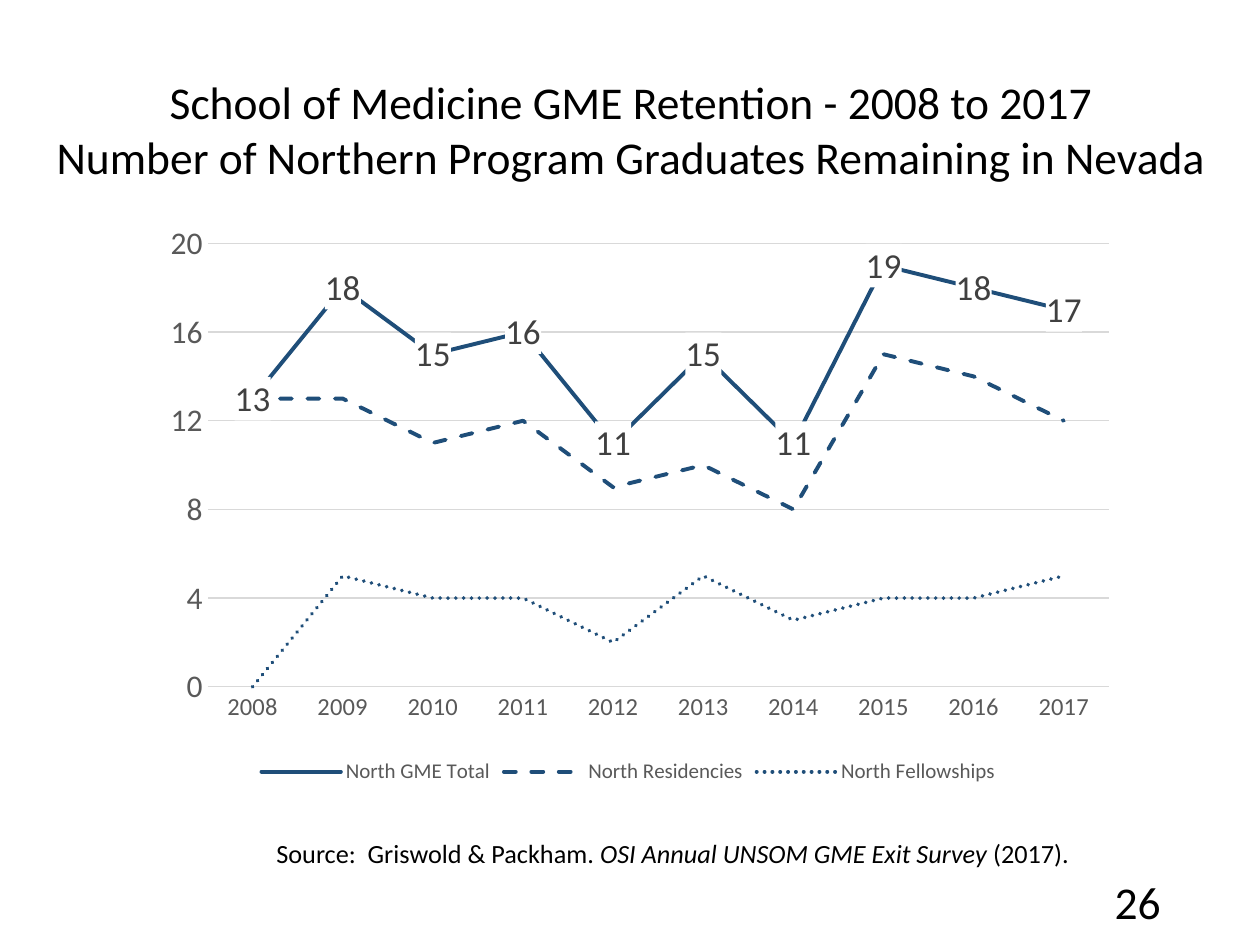
from dataclasses import dataclass

from lxml import etree
from pptx import Presentation
from pptx.chart.data import CategoryChartData
from pptx.dml.color import RGBColor
from pptx.enum.chart import XL_CHART_TYPE, XL_LABEL_POSITION, XL_LEGEND_POSITION, XL_TICK_MARK
from pptx.enum.dml import MSO_LINE
from pptx.enum.text import MSO_ANCHOR, MSO_AUTO_SIZE, PP_ALIGN
from pptx.oxml import parse_xml
from pptx.oxml.ns import nsdecls, qn
from pptx.util import Cm, Pt

LINE_CHART = XL_CHART_TYPE.LINE
LABEL_CENTER = XL_LABEL_POSITION.CENTER
LEGEND_BOTTOM = XL_LEGEND_POSITION.BOTTOM
NO_TICK = XL_TICK_MARK.NONE
SOLID, DASH, DOT = MSO_LINE.SOLID, MSO_LINE.DASH, MSO_LINE.ROUND_DOT
TOP, MIDDLE = MSO_ANCHOR.TOP, MSO_ANCHOR.MIDDLE
FIXED, GROW = MSO_AUTO_SIZE.NONE, MSO_AUTO_SIZE.SHAPE_TO_FIT_TEXT
CENTER, RIGHT = PP_ALIGN.CENTER, PP_ALIGN.RIGHT

FONT = "Calibri"
BLACK, NAVY, LABEL_GRAY, AXIS_GRAY, GRID_GRAY = "000000", "1F4E79", "404040", "595959", "D9D9D9"
YEARS = [str(year) for year in range(2008, 2018)]


@dataclass
class Run:
    text: str
    italic: bool = False


@dataclass
class TextBlock:
    left: float
    top: float
    width: float
    height: float
    size: int
    paragraphs: list[list[Run]]
    align: PP_ALIGN = CENTER
    anchor: MSO_ANCHOR = TOP
    auto_size: MSO_AUTO_SIZE = GROW


@dataclass
class Trend:
    name: str
    graduates: list[int]
    dash: MSO_LINE


TEXTS = [
    TextBlock(0.79, 1.37, 23.88, 2.49, 26, [
        [Run("School of Medicine GME Retention - 2008 to 2017")],
        [Run("Number of Northern Program Graduates Remaining in Nevada")],
    ]),
    TextBlock(4.78, 16.76, 17.68, 0.89, 15, [[
        Run("Source:  Griswold & Packham. "),
        Run("OSI Annual UNSOM GME Exit Survey ", italic=True),
        Run("(2017). "),
    ]]),
    TextBlock(17.93, 17.65, 5.72, 1.02, 26, [[Run("26")]], RIGHT, MIDDLE, FIXED),
]
TRENDS = [
    Trend("North GME Total", [13, 18, 15, 16, 11, 15, 11, 19, 18, 17], SOLID),
    Trend("North Residencies", [13, 13, 11, 12, 9, 10, 8, 15, 14, 12], DASH),
    Trend("North Fellowships", [0, 5, 4, 4, 2, 5, 3, 4, 4, 5], DOT),
]


def rgb(color: str) -> RGBColor:
    return RGBColor.from_string(color)


def style_font(font, size: int, color: str) -> None:
    font.name = FONT
    font.size = Pt(size)
    font.color.rgb = rgb(color)


def style_line(line, color: str, width: float) -> None:
    line.color.rgb = rgb(color)
    line.width = Pt(width)


def add_text(slide, block: TextBlock) -> None:
    box = slide.shapes.add_textbox(
        Cm(block.left), Cm(block.top), Cm(block.width), Cm(block.height))
    frame = box.text_frame
    frame.word_wrap = True
    frame.auto_size = block.auto_size
    frame.vertical_anchor = block.anchor
    for index, runs in enumerate(block.paragraphs):
        paragraph = frame.add_paragraph() if index else frame.paragraphs[0]
        paragraph.alignment = block.align
        for part in runs:
            run = paragraph.add_run()
            run.text = part.text
            style_font(run.font, block.size, BLACK)
            run.font.italic = part.italic


def set_plot_layout(chart, x: float, y: float, w: float, h: float) -> None:
    """Fix the inner plot area, in fractions of the chart's size."""
    plot_area = chart.element.find(".//" + qn("c:plotArea"))
    layout = plot_area.find(qn("c:layout"))
    if layout is None:
        layout = etree.Element(qn("c:layout"))
        plot_area.insert(0, layout)
    manual = etree.SubElement(layout, qn("c:manualLayout"))
    settings = {"layoutTarget": "inner", "xMode": "edge", "yMode": "edge",
                "x": x, "y": y, "w": w, "h": h}
    for tag, value in settings.items():
        etree.SubElement(manual, qn(f"c:{tag}")).set("val", str(value))


def label_values(series) -> None:
    """Show values on a white patch in the middle of each point."""
    labels = series.data_labels
    labels.show_value = True
    labels.position = LABEL_CENTER
    style_font(labels.font, 20, LABEL_GRAY)
    patch = parse_xml(
        f'<c:spPr {nsdecls("c", "a")}><a:solidFill><a:srgbClr val="FFFFFF"/></a:solidFill>'
        "<a:ln><a:noFill/></a:ln></c:spPr>")
    labels.font  # the text properties must follow the patch
    series.format.line  # the line properties belong to the series itself
    series_labels = series.data_labels._element
    series_labels.find(qn("c:txPr")).addprevious(patch)


def style_axes(chart) -> None:
    years, counts = chart.category_axis, chart.value_axis
    for axis, size in ((years, 14), (counts, 18)):
        axis.major_tick_mark = axis.minor_tick_mark = NO_TICK
        style_font(axis.tick_labels.font, size, AXIS_GRAY)
    style_line(years.format.line, GRID_GRAY, 0.75)
    counts.format.line.fill.background()
    counts.minimum_scale, counts.maximum_scale, counts.major_unit = 0, 20, 4
    counts.has_major_gridlines = True
    style_line(counts.major_gridlines.format.line, GRID_GRAY, 0.75)


def add_retention_chart(slide) -> None:
    retention = CategoryChartData()
    retention.categories = YEARS
    for trend in TRENDS:
        retention.add_series(trend.name, trend.graduates)
    chart = slide.shapes.add_chart(
        LINE_CHART, Cm(2.57), Cm(4.45), Cm(20.19), Cm(11.46), retention).chart
    style_font(chart.font, 10, BLACK)
    chart.has_title = False
    chart.has_legend = True
    chart.legend.position = LEGEND_BOTTOM
    chart.legend.include_in_layout = False
    style_font(chart.legend.font, 12, AXIS_GRAY)
    style_axes(chart)
    set_plot_layout(chart, 0.08, 0.04, 0.9, 0.78)

    plot = chart.plots[0]
    plot.vary_by_categories = False
    for series, trend in zip(plot.series, TRENDS):
        series.smooth = False
        style_line(series.format.line, NAVY, 2.25)
        series.format.line.dash_style = trend.dash
        series._element.find(".//" + qn("a:ln")).set("cap", "rnd")
    label_values(plot.series[0])


def main() -> None:
    deck = Presentation()
    deck.slide_width, deck.slide_height = Cm(25.4), Cm(19.05)
    slide = deck.slides.add_slide(deck.slide_layouts[6])
    for block in TEXTS:
        add_text(slide, block)
    add_retention_chart(slide)
    deck.save("out.pptx")


if __name__ == "__main__":
    main()
